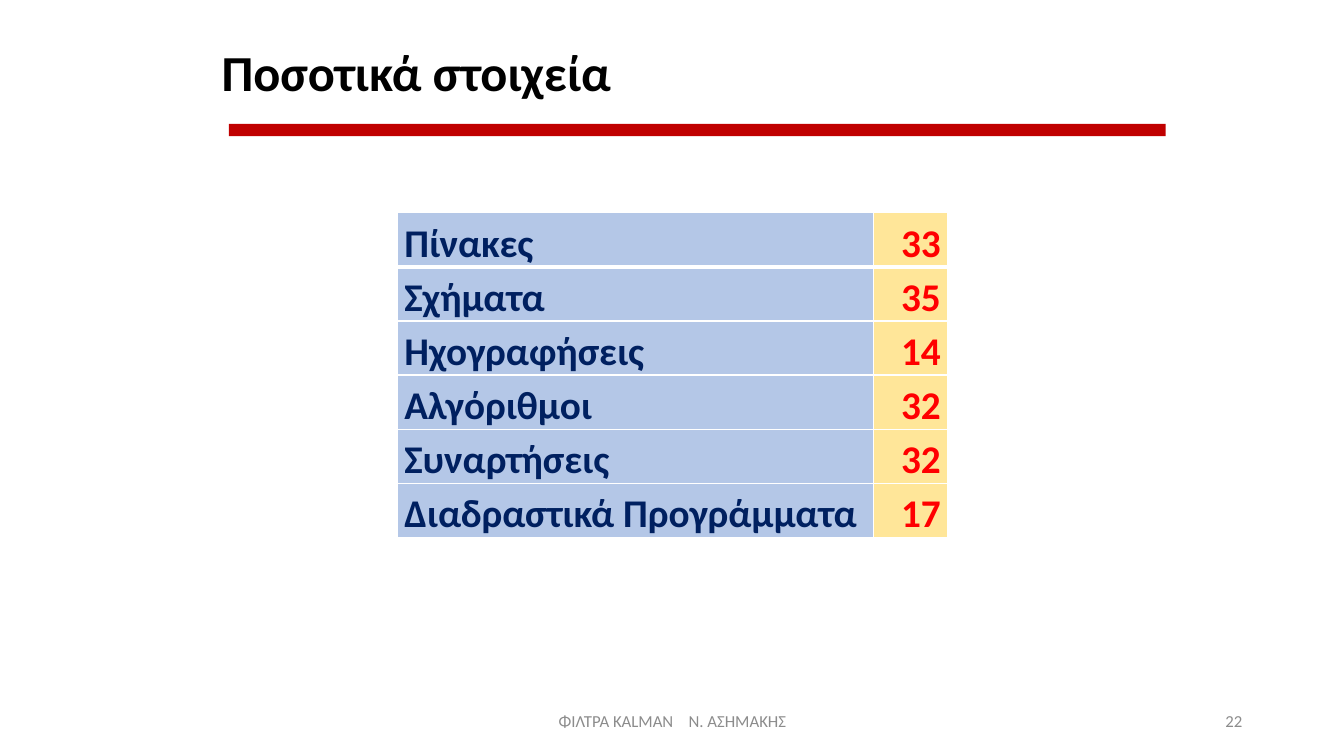
from dataclasses import dataclass

from lxml import etree
from pptx import Presentation
from pptx.dml.color import RGBColor
from pptx.enum.shapes import MSO_SHAPE
from pptx.enum.text import MSO_ANCHOR, PP_ALIGN
from pptx.oxml.ns import qn
from pptx.util import Inches, Pt

RECTANGLE = MSO_SHAPE.RECTANGLE
LEFT, CENTER, RIGHT = PP_ALIGN.LEFT, PP_ALIGN.CENTER, PP_ALIGN.RIGHT
MIDDLE = MSO_ANCHOR.MIDDLE


@dataclass(frozen=True)
class Theme:
    font: str = "Calibri"
    title_size: int = 36
    table_size: int = 28
    footer_size: int = 12
    title: str = "000000"
    rule: str = "C00000"
    label: str = "002060"
    label_fill: str = "B4C7E7"
    count: str = "FF0000"
    count_fill: str = "FFE699"
    border: str = "FFFFFF"
    footer: str = "8C8C8C"


THEME = Theme()

QUANTITIES = [
    ("Πίνακες", 33),
    ("Σχήματα", 35),
    ("Ηχογραφήσεις", 14),
    ("Αλγόριθμοι", 32),
    ("Συναρτήσεις", 32),
    ("Διαδραστικά Προγράμματα", 17),
]


def write(frame, *texts, size, color, bold=False, align=LEFT, line_spacing=1.0, gap=0):
    """Write texts on one line, parted by a space widened by gap points."""
    paragraph = frame.paragraphs[0]
    paragraph.alignment = align
    paragraph.line_spacing = line_spacing
    for index, text in enumerate(texts):
        if index:
            space = paragraph.add_run()
            space.text = " "
            space.font.size = Pt(size)
            space._r.get_or_add_rPr().set("spc", str(gap * 100))
        run = paragraph.add_run()
        run.text = text
        run.font.name = THEME.font
        run.font.size = Pt(size)
        run.font.bold = bold
        run.font.color.rgb = RGBColor.from_string(color)


def add_text(slide, box, *texts, **text_format):
    frame = slide.shapes.add_textbox(*map(Inches, box)).text_frame
    frame.word_wrap = True
    frame.vertical_anchor = MIDDLE
    write(frame, *texts, **text_format)


def set_borders(cell, bottom_width):
    """Draw the four cell borders, which precede the fill in the XML."""
    properties = cell._tc.get_or_add_tcPr()
    widths = {"a:lnL": 1, "a:lnR": 1, "a:lnT": 1, "a:lnB": bottom_width}
    for position, (tag, width) in enumerate(widths.items()):
        line = etree.Element(qn(tag), w=str(Pt(width)))
        fill = etree.SubElement(line, qn("a:solidFill"))
        etree.SubElement(fill, qn("a:srgbClr"), val=THEME.border)
        properties.insert(position, line)


def add_heading(slide, box):
    left, top, width, height = box
    # Red rule under the title
    rule = slide.shapes.add_shape(
        RECTANGLE, Inches(left + 0.17), Inches(top + 1.11), Inches(9.29), Inches(0.12))
    rule.shadow.inherit = False
    rule.fill.solid()
    rule.fill.fore_color.rgb = RGBColor.from_string(THEME.rule)
    rule.line.fill.background()
    # Title
    add_text(slide, box, "Ποσοτικά στοιχεία", size=THEME.title_size,
             color=THEME.title, bold=True, line_spacing=0.9)


def add_quantities(slide, box):
    left, top, width, height = map(Inches, box)
    count_width = Inches(0.74)
    table = slide.shapes.add_table(
        len(QUANTITIES), 2, left, top, width, height).table
    table.columns[0].width = width - count_width
    table.columns[1].width = count_width
    styles = [(THEME.label, THEME.label_fill, LEFT),
              (THEME.count, THEME.count_fill, RIGHT)]
    for row, quantity in enumerate(QUANTITIES):
        for column, (color, fill, align) in enumerate(styles):
            cell = table.cell(row, column)
            cell.margin_left = cell.margin_right = Inches(0.07)
            cell.margin_top = cell.margin_bottom = 0
            cell.fill.solid()
            cell.fill.fore_color.rgb = RGBColor.from_string(fill)
            # A thicker line sets off the first row
            set_borders(cell, bottom_width=3 if row == 0 else 1)
            write(cell.text_frame, str(quantity[column]), size=THEME.table_size,
                  color=color, bold=True, align=align, line_spacing=1.15)


def add_footer(slide, box):
    left, top, width, height = box
    number_width = 3
    footer_format = {"size": THEME.footer_size, "color": THEME.footer}
    add_text(slide, (left, top, 4.5, height), "ΦΙΛΤΡΑ KALMAN", "Ν. ΑΣΗΜΑΚΗΣ",
             align=CENTER, gap=8, **footer_format)
    add_text(slide, (left + width - number_width, top, number_width, height), "22",
             align=RIGHT, **footer_format)


def main():
    presentation = Presentation()
    presentation.slide_width = Inches(13.33)
    presentation.slide_height = Inches(7.5)
    slide = presentation.slides.add_slide(presentation.slide_layouts[6])
    add_heading(slide, (2.1, 0.12, 11.2, 1.26))
    add_footer(slide, (4.42, 6.95, 8, 0.4))
    add_quantities(slide, (3.94, 2.11, 5.46, 3.22))
    presentation.save("out.pptx")


if __name__ == "__main__":
    main()
